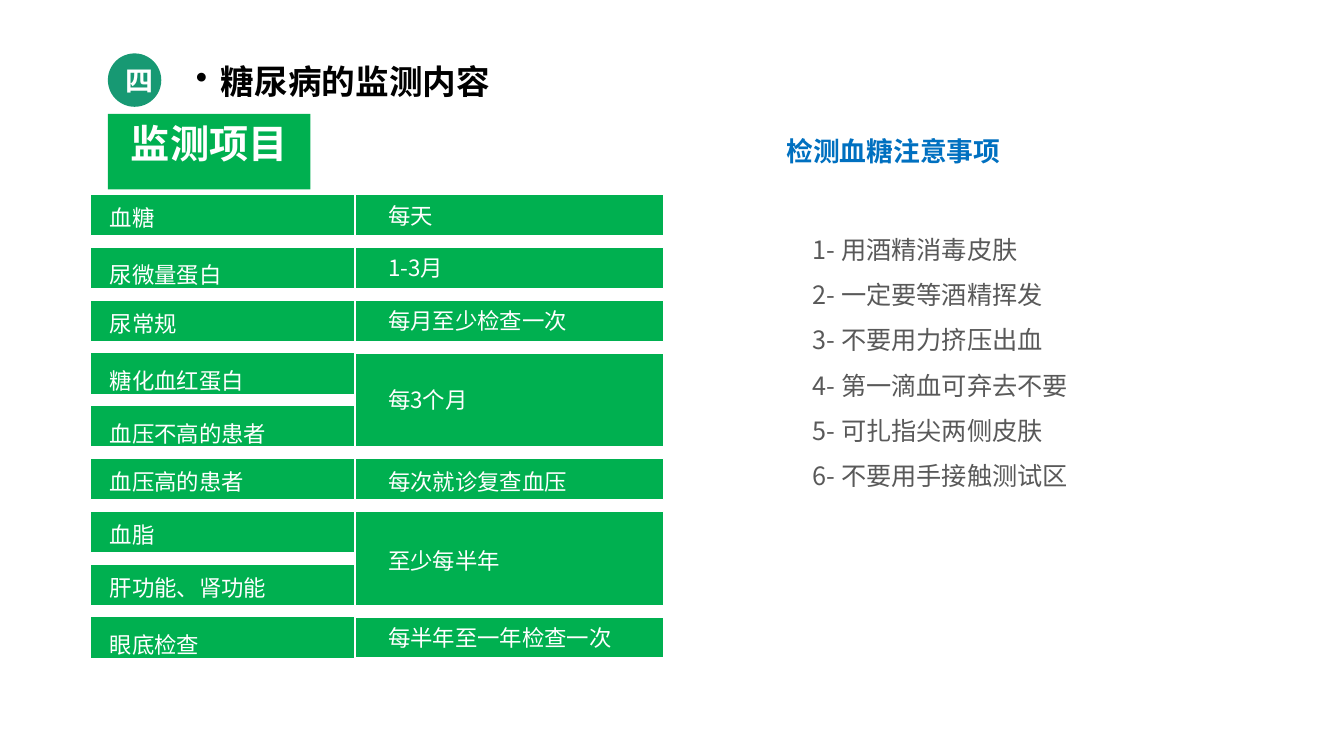
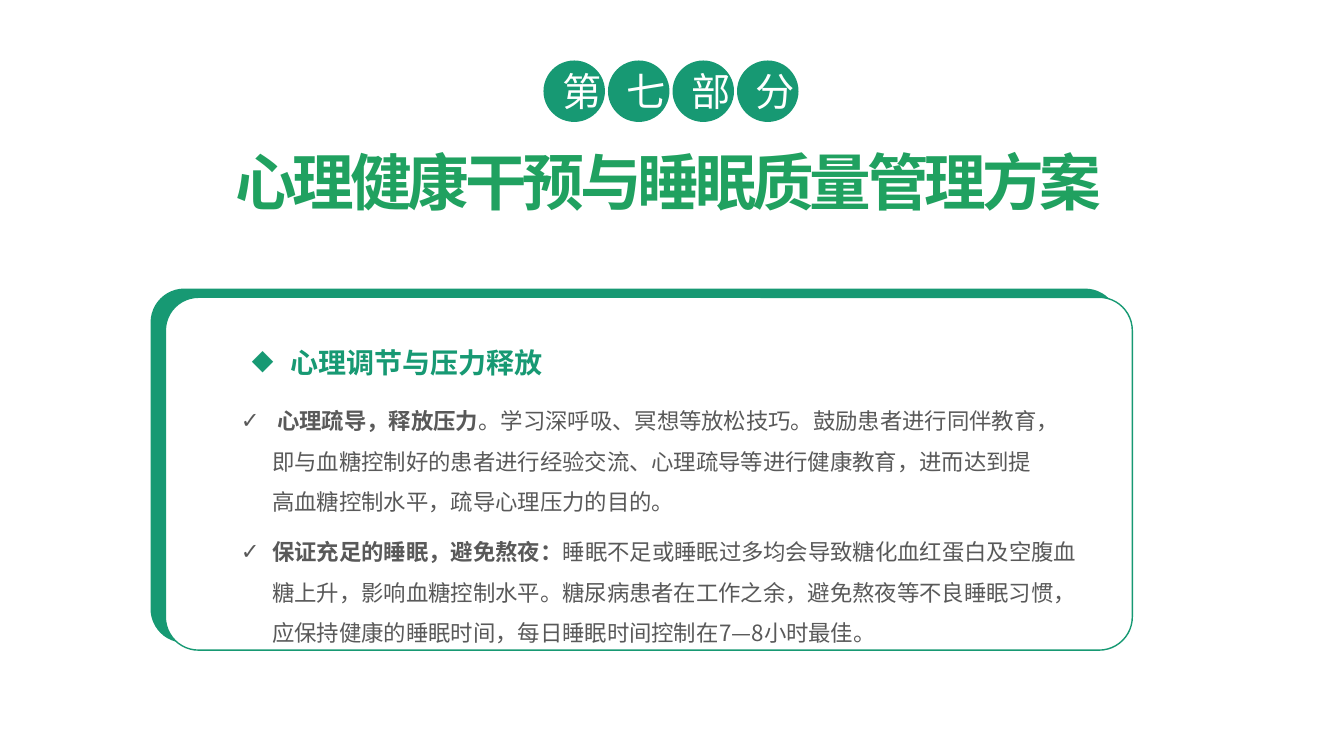
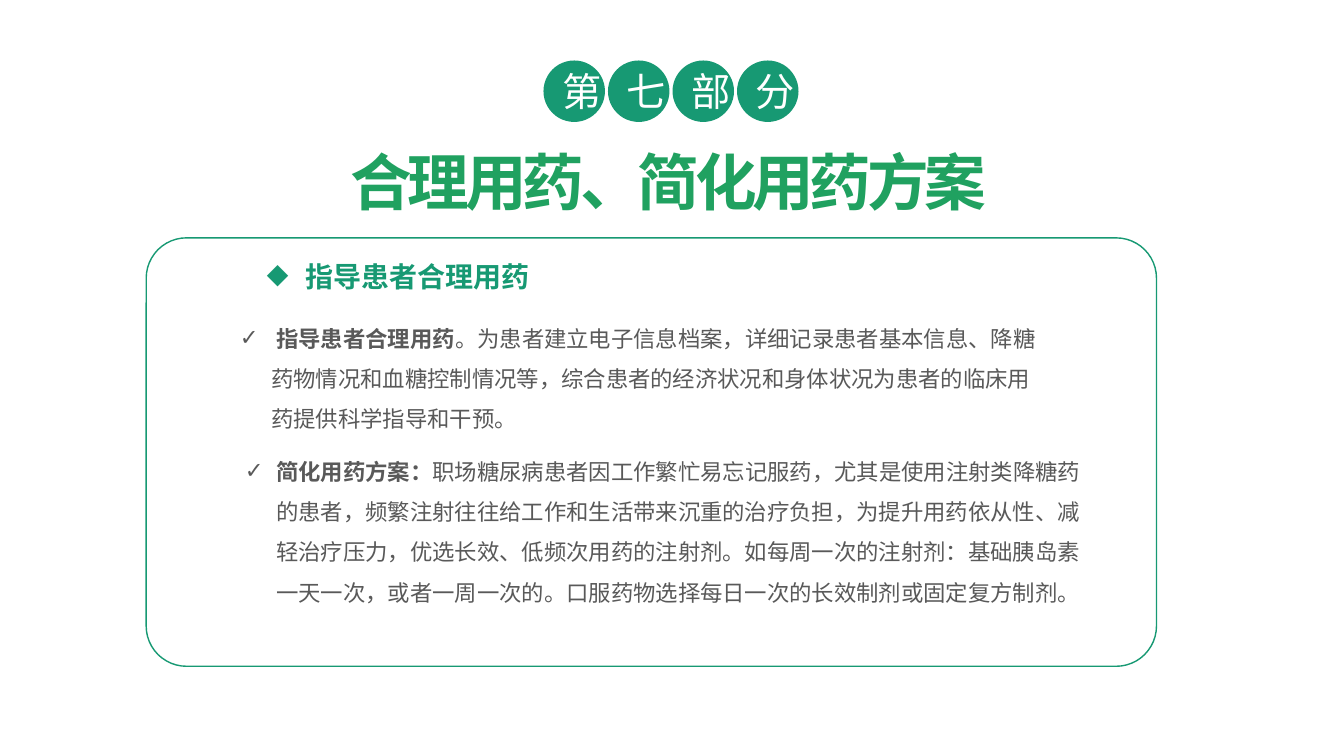
"""Build three slides on diabetes monitoring, mental health and medication."""
from lxml.etree import SubElement
from pptx import Presentation
from pptx.dml.color import RGBColor
from pptx.enum.shapes import MSO_SHAPE
from pptx.enum.text import MSO_ANCHOR, MSO_AUTO_SIZE, PP_ALIGN
from pptx.oxml import parse_xml
from pptx.oxml.ns import nsdecls, qn
from pptx.util import Inches, Pt

COLORS = {
    "teal": "179973",
    "mid": "20A160",
    "leaf": "29A84D",
    "bar": "00B050",
    "blue": "0070C0",
    "gray": "595959",
    "black": "000000",
    "white": "FFFFFF",
}
SC = "Noto Sans CJK SC"
JP = "Noto Sans CJK JP"
TITLE_STOPS = ((3, "teal"), (60, "mid"), (100, "leaf"))


class Deck:
    """Hold the shared style and the current slide."""

    def __init__(self):
        self.deck = Presentation()
        self.deck.slide_width = Inches(13.33)
        self.deck.slide_height = Inches(7.5)
        self.page = None

    def add_page(self, layout):
        self.page = self.deck.slides.add_slide(self.deck.slide_layouts[layout])

    def color(self, name):
        return RGBColor.from_string(COLORS[name])

    def span(self, para, text, size, color, font=SC, bold=False):
        span = para.add_run()
        span.text = text
        span.font.size = Pt(size)
        span.font.bold = bold
        span.font.color.rgb = self.color(color)
        span.font.name = font
        SubElement(span.font._element, qn("a:ea")).set("typeface", font)
        return span

    def para(self, frame, spacing=1.0, align=PP_ALIGN.LEFT, margin=0, indent=0, bullet=None):
        para = frame.paragraphs[0]
        if para.runs:
            para = frame.add_paragraph()
        properties = para._p.get_or_add_pPr()
        properties.set("marL", str(Inches(margin)))
        properties.set("indent", str(Inches(indent)))
        if bullet:
            SubElement(properties, qn("a:buChar")).set("char", bullet)
        else:
            SubElement(properties, qn("a:buNone"))
        para.alignment = align
        para.line_spacing = spacing
        para.space_before = para.space_after = Pt(0)
        return para

    def frame(self, box, wrap=True):
        frame = box.text_frame
        frame.auto_size = MSO_AUTO_SIZE.NONE
        frame.word_wrap = wrap
        frame.vertical_anchor = MSO_ANCHOR.TOP
        return frame

    def text_box(self, left, top, width, height, wrap=True):
        box = self.page.shapes.add_textbox(*map(Inches, (left, top, width, height)))
        return self.frame(box, wrap)

    def placeholder(self, index, left, top, width, height, wrap=True):
        box = self.page.placeholders[index]
        box.left, box.top, box.width, box.height = map(Inches, (left, top, width, height))
        box.element.getparent().append(box.element)
        return self.frame(box, wrap)

    def shape(self, kind, left, top, width, height, fill, line=None, weight=1):
        box = self.page.shapes.add_shape(kind, *map(Inches, (left, top, width, height)))
        box.shadow.inherit = False
        box.fill.solid()
        box.fill.fore_color.rgb = self.color(fill)
        if line:
            box.line.color.rgb = self.color(line)
            box.line.width = Pt(weight)
        else:
            box.line.fill.background()
        return box

    def circle(self, left, top, size, text, points, font=SC, bold=False):
        box = self.shape(MSO_SHAPE.OVAL, left, top, size, size, "teal")
        para = self.para(box.text_frame, align=PP_ALIGN.CENTER)
        self.span(para, text, points, "white", font, bold)

    def bar(self, left, top, width, height, text, spacing, inset, weight):
        box = self.shape(MSO_SHAPE.RECTANGLE, left, top, width, height, "bar", "white", weight)
        box.text_frame.margin_left = Inches(inset)
        self.span(self.para(box.text_frame, spacing), text, 16, "white")

    def card(self, left, top, width, height, fill):
        box = self.shape(MSO_SHAPE.ROUNDED_RECTANGLE, left, top, width, height, fill, "teal")
        box.adjustments[0] = 0.094

    def part_title(self, text):
        for number, character in enumerate("第七部分"):
            self.circle(5.39 + 0.64 * number, 0.6, 0.61, character, 28)
        frame = self.placeholder(0, 1.5, 1.38, 10.26, 0.84)
        span = self.span(self.para(frame, align=PP_ALIGN.CENTER), text, 44, "teal", JP, True)
        properties = span.font._element
        properties.set("spc", "-300")
        stops = "".join(
            f'<a:gs pos="{place * 1000}"><a:srgbClr val="{COLORS[name]}"/></a:gs>'
            for place, name in TITLE_STOPS
        )
        gradient = parse_xml(
            f'<a:gradFill {nsdecls("a")}><a:gsLst>{stops}</a:gsLst><a:path path="circle">'
            '<a:fillToRect l="100000" t="100000"/></a:path></a:gradFill>'
        )
        properties.replace(properties.find(qn("a:solidFill")), gradient)

    def heading(self, left, top, width, text):
        frame = self.text_box(left, top, width, 0.44)
        para = self.para(frame, margin=0.38, indent=-0.38, bullet="◆")
        self.span(para, text, 20, "teal", JP, True)

    def check_item(self, index, place, lead, text):
        frame = self.placeholder(index, *place)
        para = self.para(frame, 1.5, margin=0.31, indent=-0.31, bullet="✓")
        self.span(para, lead, 16, "gray", JP, True)
        self.span(para, text, 16, "gray", JP)


LABELS = (
    ("血糖", 1.2),
    ("尿微量蛋白", 1.5),
    ("尿常规", 1.2),
    ("糖化血红蛋白", 1.5),
    ("血压不高的患者", 1.5),
    ("血压高的患者", 1.2),
    ("血脂", 1.2),
    ("肝功能、肾功能", 1.2),
    ("眼底检查", 1.5),
)
INTERVALS = (
    (0, 1, "每天", 1.0),
    (1, 1, "1-3月", 1.0),
    (2, 1, "每月至少检查一次", 1.0),
    (3, 2, "每3个月", 1.0),
    (5, 1, "每次就诊复查血压", 1.2),
    (6, 2, "至少每半年", 1.2),
    (8, 1, "每半年至一年检查一次", 1.0),
)
NOTES = (
    "1- 用酒精消毒皮肤",
    "2- 一定要等酒精挥发",
    "3- 不要用力挤压出血",
    "4- 第一滴血可弃去不要",
    "5- 可扎指尖两侧皮肤",
    "6- 不要用手接触测试区",
)


def monitoring(deck):
    """Draw the monitoring schedule and the blood sugar notes."""
    deck.add_page(1)
    frame = deck.placeholder(0, 1.84, 0.6, 3.12, 0.46, False)
    para = deck.para(frame, 0.9, PP_ALIGN.CENTER, 0.25, -0.25, "•")
    deck.span(para, "糖尿病的监测内容", 24, "black", bold=True)
    deck.circle(1.07, 0.53, 0.53, "四", 20, JP, True)

    first, height = 1.93, 0.41
    pitch = (6.12 - first) / (len(LABELS) - 1)
    for row, (text, spacing) in enumerate(LABELS):
        deck.bar(0.9, first + row * pitch, 2.75, height, text, spacing, 0.19, 0.75)
    for row, rows, text, spacing in INTERVALS:
        tall = height + (rows - 1) * pitch
        deck.bar(3.52, first + row * pitch, 3.06, tall, text, spacing, 0.33, 1)

    box = deck.shape(MSO_SHAPE.RECTANGLE, 1.07, 1.13, 2.01, 0.75, "bar")
    para = deck.para(deck.frame(box, False), align=PP_ALIGN.CENTER)
    deck.span(para, "监测项目", 28, "white", bold=True)

    frame = deck.placeholder(1, 7.96, 2.12, 2.78, 3.28)
    for note in NOTES:
        deck.span(deck.para(frame, 1.5), note, 18, "gray")
    para = deck.para(deck.text_box(7.7, 1.29, 2.32, 0.42, False), align=PP_ALIGN.CENTER)
    deck.span(para, "检测血糖注意事项", 19.1, "blue", bold=True)


def mental_health(deck):
    """Draw the mental health and sleep slide."""
    deck.add_page(3)
    deck.part_title("心理健康干预与睡眠质量管理方案")
    deck.card(1.5, 2.87, 9.59, 3.5, "teal")
    deck.card(1.64, 2.95, 9.59, 3.5, "white")
    deck.heading(2.4, 3.38, 5.11, "心理调节与压力释放")
    deck.check_item(
        1, (2.29, 3.86, 8.16, 1.31), " 心理疏导，释放压力",
        "。学习深呼吸、冥想等放松技巧。鼓励患者进行同伴教育，即与血糖控制好的患者进行经验交流、"
        "心理疏导等进行健康教育，进而达到提高血糖控制水平，疏导心理压力的目的。",
    )
    deck.check_item(
        2, (2.29, 5.16, 8.56, 1.31), "保证充足的睡眠，避免熬夜：",
        "睡眠不足或睡眠过多均会导致糖化血红蛋白及空腹血糖上升，影响血糖控制水平。"
        "糖尿病患者在工作之余，避免熬夜等不良睡眠习惯，应保持健康的睡眠时间，"
        "每日睡眠时间控制在7—8小时最佳。",
    )


def medication(deck):
    """Draw the medication slide."""
    deck.add_page(3)
    deck.part_title("合理用药、简化用药方案")
    deck.card(1.45, 2.36, 10.02, 4.25, "white")
    deck.heading(2.55, 2.53, 4.96, "指导患者合理用药")
    deck.check_item(
        1, (2.28, 3.04, 8.17, 1.31), " 指导患者合理用药",
        "。为患者建立电子信息档案，详细记录患者基本信息、降糖药物情况和血糖控制情况等，"
        "综合患者的经济状况和身体状况为患者的临床用药提供科学指导和干预。",
    )
    deck.check_item(
        2, (2.33, 4.36, 8.52, 1.72), "简化用药方案：",
        "职场糖尿病患者因工作繁忙易忘记服药，尤其是使用注射类降糖药的患者，"
        "频繁注射往往给工作和生活带来沉重的治疗负担，为提升用药依从性、减轻治疗压力，"
        "优选长效、低频次用药的注射剂。如每周一次的注射剂：基础胰岛素一天一次，"
        "或者一周一次的。口服药物选择每日一次的长效制剂或固定复方制剂。",
    )


def main():
    """Build and save the deck."""
    deck = Deck()
    monitoring(deck)
    mental_health(deck)
    medication(deck)
    deck.deck.save("out.pptx")


if __name__ == "__main__":
    main()
